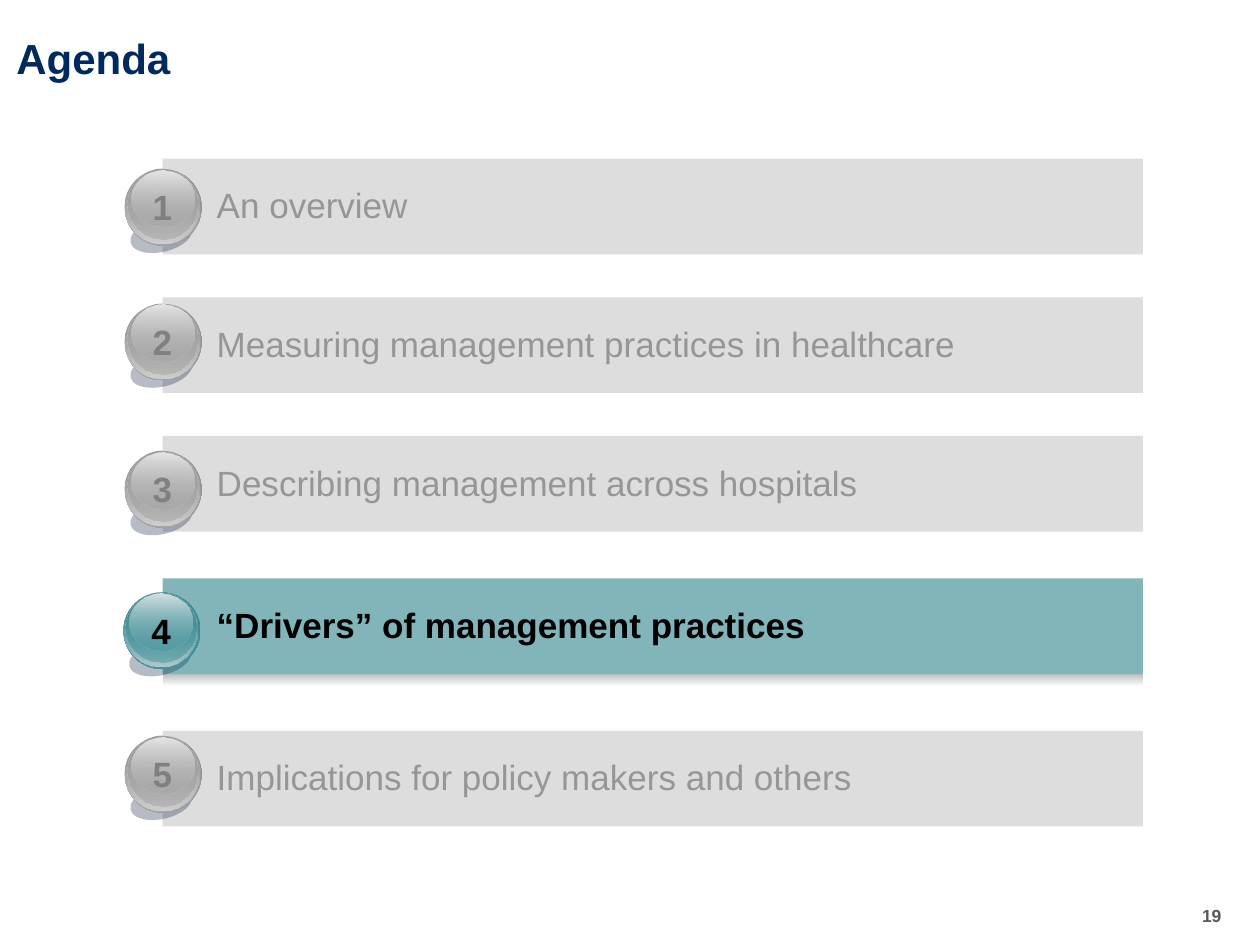
from dataclasses import dataclass

from lxml.etree import SubElement
from pptx import Presentation
from pptx.dml.color import RGBColor
from pptx.enum.shapes import MSO_SHAPE
from pptx.enum.text import MSO_ANCHOR, PP_ALIGN
from pptx.oxml.ns import qn
from pptx.util import Emu, Pt

PX = 9144  # 100 px to the inch
FONT = "Arial"


@dataclass(frozen=True)
class Theme:
    bar: str
    label: str
    digit: str
    rim: str
    body: str
    glow: str
    core: str
    shine: str
    active: bool = False


@dataclass(frozen=True)
class Item:
    text: str
    top: int
    orb: int
    theme: Theme


@dataclass(frozen=True)
class Stop:
    color: str
    alpha: int = 100


GREY = Theme("DDDDDD", "969696", "808080",
             "8C8C8C", "A4A4A4", "CECECE", "A1A1A1", "E5E5E5")
TEAL = Theme("82B5B9", "000000", "000000",
             "3E7F87", "48959E", "B1C8CC", "47929B", "D6E1E3", True)

ITEMS = [
    Item("An overview", 126, 134, GREY),
    Item("Measuring management practices in healthcare", 236, 241, GREY),
    Item("Describing management across hospitals", 346, 358, GREY),
    Item("“Drivers” of management practices", 459, 470, TEAL),
    Item("Implications for policy makers and others", 580, 584, GREY),
]

BAR_X, BAR_W, BAR_H = 129, 778, 76


def rgb(color: str) -> RGBColor:
    return RGBColor.from_string(color)


def box(x: int, y: int, w: int, h: int) -> list[Emu]:
    return [Emu(n * PX) for n in (x, y, w, h)]


def paint(shape, *stops: Stop) -> None:
    """Fill with one colour, or with two running from top to bottom."""
    fill = shape.fill
    if len(stops) == 1:
        fill.solid()
        fill.fore_color.rgb = rgb(stops[0].color)
    else:
        fill.gradient()
        fill.gradient_angle = 270
        for part, stop in zip(fill.gradient_stops, stops):
            part.color.rgb = rgb(stop.color)
    for node, stop in zip(shape._element.spPr.iter(qn("a:srgbClr")), stops):
        if stop.alpha < 100:
            SubElement(node, qn("a:alpha")).set("val", str(stop.alpha * 1000))


def add_form(shapes, kind: MSO_SHAPE, place: list[Emu], *stops: Stop):
    shape = shapes.add_shape(kind, *place)
    shape.shadow.inherit = False
    shape.line.fill.background()
    if stops:
        paint(shape, *stops)
    else:
        shape.fill.background()
    return shape


def set_text(shape, text: str, size: int, color: str, bold: bool = False,
             wrap: bool = True, inset: int = 0) -> None:
    frame = shape.text_frame
    frame.word_wrap = wrap
    frame.margin_left = frame.margin_right = Emu(inset * PX)
    frame.margin_top = frame.margin_bottom = Emu(inset * PX)
    para = frame.paragraphs[0]
    para.text = text
    font = para.font
    font.name, font.size, font.bold = FONT, Pt(size), bold
    font.color.rgb = rgb(color)


def add_orb(shapes, x: int, y: int, digit: str, theme: Theme) -> None:
    oval = MSO_SHAPE.OVAL
    shade = add_form(shapes, oval, box(x + 4, y + 40, 50, 26), Stop("0F2145", 30))
    shade.rotation = 347.1
    layers = [
        (0, 0, 61, 61, Stop(theme.rim), Stop(theme.body)),
        (0, 0, 59, 59, Stop(theme.body, 0), Stop(theme.glow)),
        (2, 0, 56, 56, Stop(theme.core), Stop(theme.body, 48)),
        (5, 1, 50, 45, Stop(theme.shine), Stop(theme.body, 38)),
    ]
    for dx, dy, w, h, first, last in layers:
        add_form(shapes, oval, box(x + dx, y + dy, w, h), first, last)
    mark = add_form(shapes, oval, box(x + 19, y + 19, 22, 22))
    set_text(mark, digit, 20, theme.digit, bold=True, wrap=False, inset=8)
    mark.text_frame.vertical_anchor = MSO_ANCHOR.MIDDLE
    mark.text_frame.paragraphs[0].alignment = PP_ALIGN.CENTER


def add_item(slide, num: int, item: Item) -> None:
    shapes = slide.shapes.add_group_shape().shapes
    theme = item.theme
    rect = MSO_SHAPE.RECTANGLE
    if theme.active:
        add_form(shapes, rect, box(BAR_X, item.top + 72, BAR_W, 14),
                 Stop("A4A4A4"), Stop("FFFFFF"))
    add_form(shapes, rect, box(BAR_X, item.top, BAR_W, BAR_H), Stop(theme.bar))
    label = shapes.add_textbox(*box(172, item.top + 20, 709, 34))
    set_text(label, item.text, 20, theme.label, bold=theme.active)
    add_orb(shapes, 98 if theme.active else 99, item.orb, str(num), theme)


def main() -> None:
    deck = Presentation()
    deck.slide_width, deck.slide_height = Emu(1000 * PX), Emu(750 * PX)
    slide = deck.slides.add_slide(deck.slide_layouts[6])
    page = slide.shapes.add_textbox(*box(954, 718, 22, 17))
    set_text(page, "19", 10, "59595A", bold=True, wrap=False)
    title = slide.shapes.add_textbox(*box(13, 26, 962, 41))
    set_text(title, "Agenda", 24, "002960", bold=True)
    for num, item in enumerate(ITEMS, 1):
        add_item(slide, num, item)
    deck.save("out.pptx")


if __name__ == "__main__":
    main()
